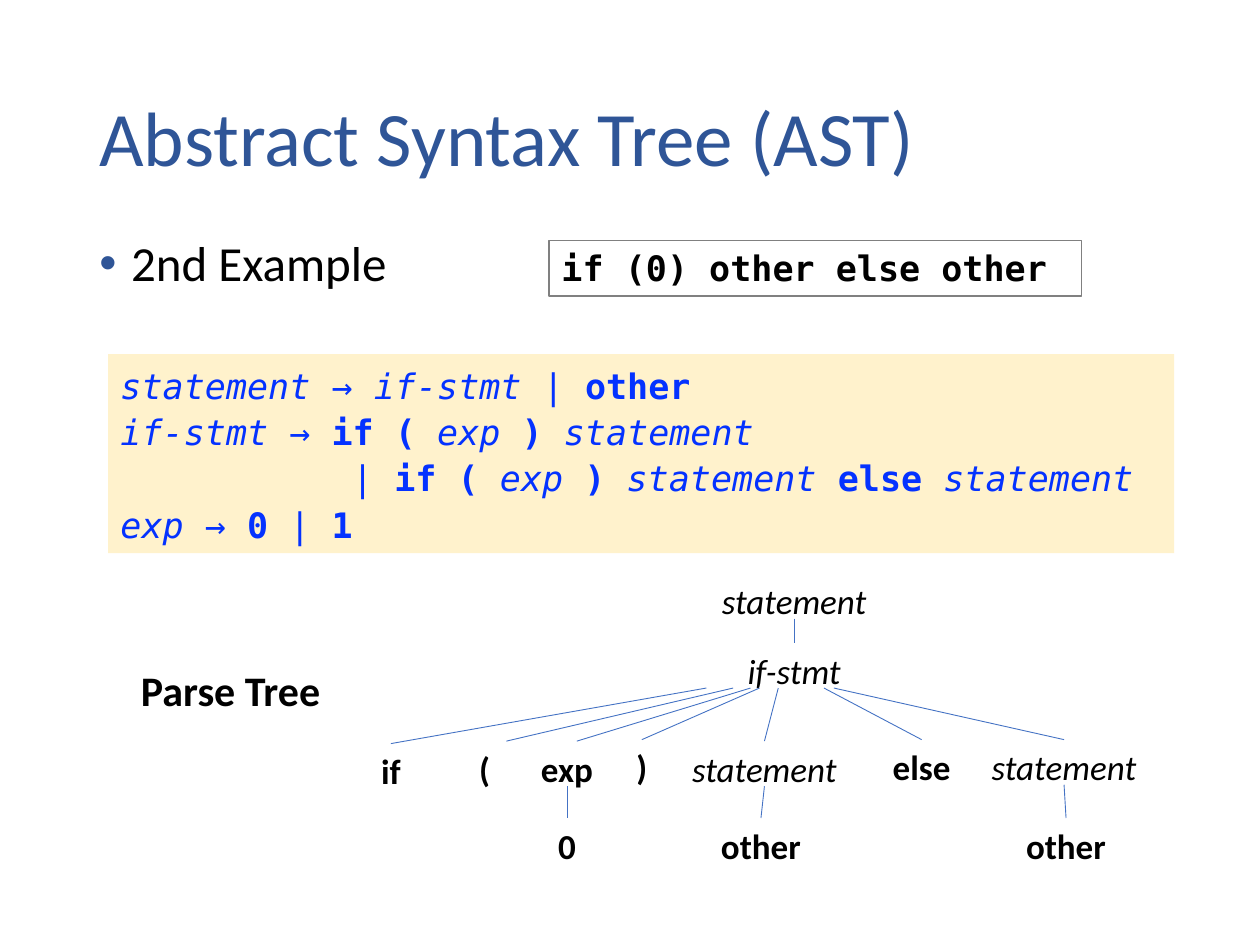
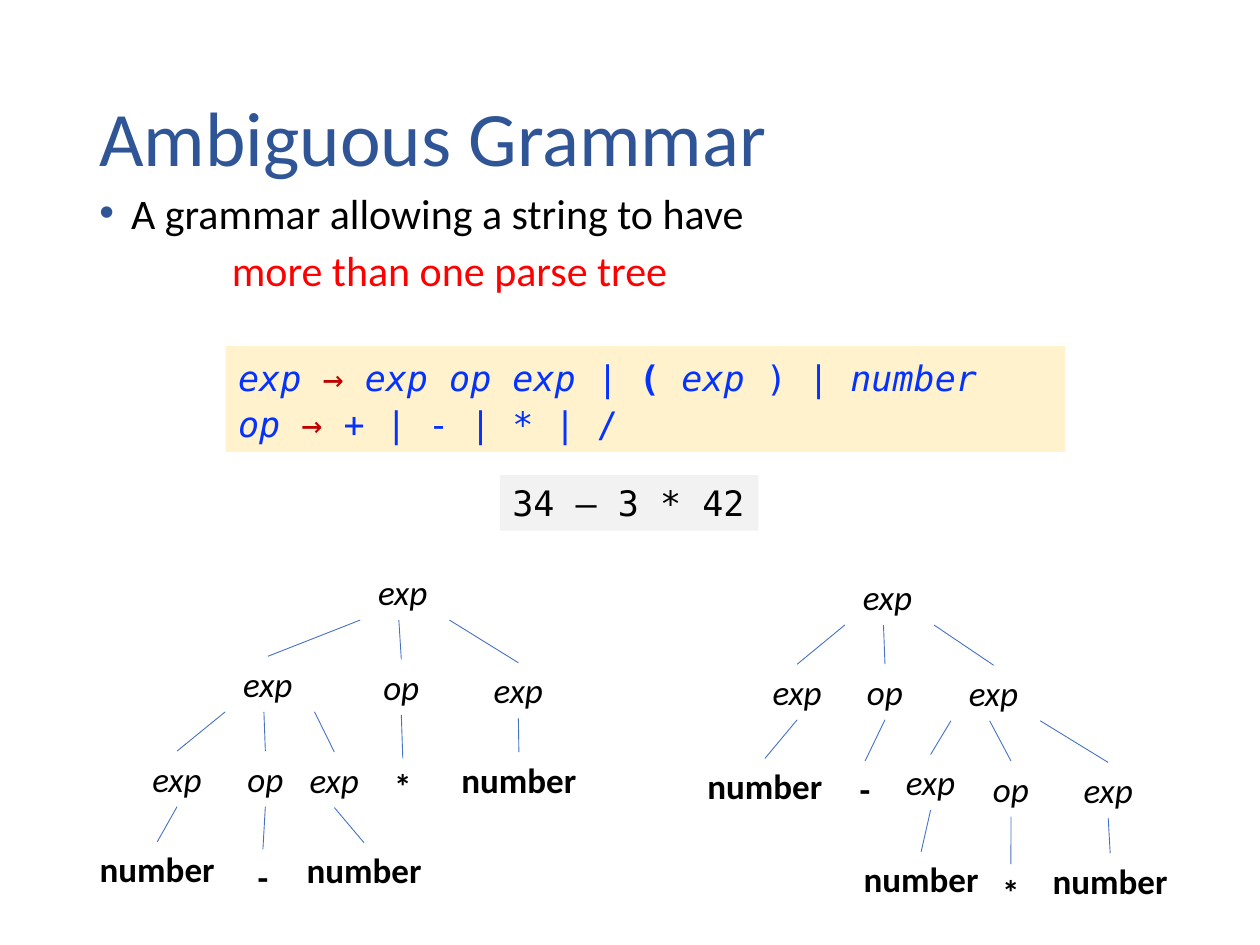
from dataclasses import dataclass

from lxml import etree
from pptx import Presentation
from pptx.dml.color import RGBColor
from pptx.enum.shapes import MSO_CONNECTOR, MSO_SHAPE
from pptx.enum.text import MSO_ANCHOR, MSO_AUTO_SIZE, PP_ALIGN
from pptx.oxml.ns import qn
from pptx.util import Cm, Pt

NAVY = RGBColor(0x2F, 0x55, 0x97)
BLACK = RGBColor(0x00, 0x00, 0x00)
RED = RGBColor(0xFF, 0x00, 0x00)
DARK_RED = RGBColor(0xC0, 0x00, 0x00)
CODE_BLUE = RGBColor(0x04, 0x32, 0xFF)
CREAM = RGBColor(0xFF, 0xF2, 0xCC)
PALE_GRAY = RGBColor(0xF2, 0xF2, 0xF2)
GRAY = RGBColor(0x80, 0x80, 0x80)
BRANCH_BLUE = RGBColor(0x44, 0x72, 0xC4)

SANS = "Calibri"
MONO = "DejaVu Sans Mono"
STRAIGHT = MSO_CONNECTOR.STRAIGHT
RECTANGLE = MSO_SHAPE.RECTANGLE
LEFT, CENTER = PP_ALIGN.LEFT, PP_ALIGN.CENTER
TOP, MIDDLE = MSO_ANCHOR.TOP, MSO_ANCHOR.MIDDLE
NO_FIT, GROW = MSO_AUTO_SIZE.NONE, MSO_AUTO_SIZE.SHAPE_TO_FIT_TEXT

TOP_SIDE, BOTTOM_SIDE = 0, 2
NODE_WIDTHS = {"statement": 3.53, "if-stmt": 3.84, "number": 2.84, "other": 2.13,
               "else": 1.7, "exp": 1.65, "op": 1.5, "if": 0.91, "0": 0.86,
               "*": 0.99, "-": 0.99, "(": 0.74, ")": 0.74}


@dataclass
class Node:
    label: str
    center: float
    top: float
    children: tuple = ()
    bold: bool = False
    lean: float = 0


@dataclass
class TreeStyle:
    node_height: float
    branch_drop: float
    fan: tuple


PARSE_STYLE = TreeStyle(0.74, 0.91, (-1.77, -1.23, -0.88, -0.7, -0.32, 0.6, 0.8))
AMBIGUOUS_STYLE = TreeStyle(1.12, 1.12, (-0.86, -0.08, 0.94))


def leaf(label, center, top, lean=0):
    return Node(label, center, top, bold=True, lean=lean)


PARSE_TREE = Node("statement", 8.59, 0, (
    Node("if-stmt", 8.59, 1.4, (
        leaf("if", 0.46, 3.43),
        leaf("(", 2.35, 3.38, lean=0.44),
        Node("exp", 4.01, 3.38, (leaf("0", 4.01, 4.93),), bold=True, lean=0.2),
        leaf(")", 5.52, 3.35),
        Node("statement", 7.99, 3.38, (leaf("other", 7.92, 4.93),)),
        leaf("else", 11.16, 3.35),
        Node("statement", 14.03, 3.35, (leaf("other", 14.07, 4.93),)),
    )),
))

SUBTRACT_FIRST_TREE = Node("exp", 6.37, 0, (
    Node("exp", 3.65, 1.85, (
        Node("exp", 1.82, 3.76, (leaf("number", 1.42, 5.59),)),
        Node("op", 3.6, 3.76, (leaf("-", 3.55, 5.74),)),
        Node("exp", 4.99, 3.78, (leaf("number", 5.59, 5.61),)),
    )),
    Node("op", 6.34, 1.91, (leaf("*", 6.37, 3.91),)),
    Node("exp", 8.7, 1.98, (leaf("number", 8.71, 3.78),)),
))

MULTIPLY_FIRST_TREE = Node("exp", 3.89, 0, (
    Node("exp", 2.07, 1.91, (leaf("number", 1.42, 3.81),)),
    Node("op", 3.84, 1.91, (leaf("-", 3.44, 3.86),)),
    Node("exp", 6.03, 1.93, (
        Node("exp", 4.76, 3.73, (leaf("number", 4.57, 5.69),)),
        Node("op", 6.38, 3.86, (leaf("*", 6.38, 5.94),)),
        Node("exp", 8.34, 3.89, (leaf("number", 8.38, 5.72),)),
    )),
))

IF_GRAMMAR = [
    (0, [("statement", "i"), (" → ", ""), ("if-stmt ", "i"), ("| ", ""), ("other", "b")]),
    (0, [("if-stmt ", "i"), ("→ ", ""), ("if ( ", "b"), ("exp ", "i"), (") ", "b"),
         ("statement", "i")]),
    (4.67, [("| ", ""), ("if ( ", "b"), ("exp ", "i"), (")", "b"), (" statement ", "i"),
            ("else", "b"), (" statement", "i")]),
    (0, [("exp → ", "i"), ("0 ", "b"), ("| ", ""), ("1", "b")]),
]

EXP_GRAMMAR = [
    (0, [("exp ", "i"), ("→ ", "r"), ("exp op exp ", "i"), ("| ", ""), ("(", "b"),
         (" exp ", "i"), (") |", ""), (" number", "i")]),
    (0, [("op ", "i"), ("→ ", "ir"), ("+ | - | * | /", "")]),
]


def box_lengths(box):
    return [Cm(length) for length in box]


def add_run(paragraph, text, size, color=BLACK, font=SANS, bold=False, italic=False):
    run = paragraph.add_run()
    run.text = text
    run.font.name = font
    run.font.size = Pt(size)
    run.font.bold = bold
    run.font.italic = italic
    run.font.color.rgb = color


def set_indent(paragraph, margin, indent=0):
    properties = paragraph._p.get_or_add_pPr()
    properties.set("marL", str(Cm(margin)))
    properties.set("indent", str(Cm(indent)))
    return properties


def set_bullet(paragraph):
    properties = set_indent(paragraph, 0.64, -0.64)
    bullet_color = etree.SubElement(properties, qn("a:buClr"))
    etree.SubElement(bullet_color, qn("a:srgbClr")).set("val", str(NAVY))
    etree.SubElement(properties, qn("a:buFont")).set("typeface", "Arial")
    etree.SubElement(properties, qn("a:buChar")).set("char", "•")


def set_plain(paragraph, margin):
    etree.SubElement(set_indent(paragraph, margin), qn("a:buNone"))


def place(shape, box):
    shape.left, shape.top, shape.width, shape.height = box_lengths(box)


def add_titled_slide(presentation, title):
    slide = presentation.slides.add_slide(presentation.slide_layouts[1])
    shape = slide.shapes.title
    place(shape, (1.75, 1.02, 21.9, 3.68))
    frame = shape.text_frame
    frame.vertical_anchor = MIDDLE
    frame.auto_size = NO_FIT
    paragraph = frame.paragraphs[0]
    paragraph.alignment = LEFT
    paragraph.line_spacing = 0.9
    add_run(paragraph, title, 44, NAVY)
    return slide


def fill_body(slide, box, lines, size, line_spacing):
    shape = slide.placeholders[1]
    place(shape, box)
    frame = shape.text_frame
    frame.auto_size = NO_FIT
    for index, (text, color, plain_margin) in enumerate(lines):
        paragraph = frame.add_paragraph() if index else frame.paragraphs[0]
        paragraph.line_spacing = line_spacing
        paragraph.space_before = Pt(10)
        if plain_margin:
            set_plain(paragraph, plain_margin)
        else:
            set_bullet(paragraph)
        add_run(paragraph, text, size, color)


def add_panel(slide, box, fill=None, line=None):
    shape = slide.shapes.add_shape(RECTANGLE, *box_lengths(box))
    shape.shadow.inherit = False
    if fill is None:
        shape.fill.background()
    else:
        shape.fill.solid()
        shape.fill.fore_color.rgb = fill
    if line is None:
        shape.line.fill.background()
    else:
        shape.line.color.rgb = line
        shape.line.width = Pt(0.75)
    frame = shape.text_frame
    frame.word_wrap = True
    frame.vertical_anchor = TOP
    frame.paragraphs[0].alignment = LEFT
    return frame


def add_grammar(slide, box, rules):
    frame = add_panel(slide, box, fill=CREAM)
    for index, (margin, runs) in enumerate(rules):
        paragraph = frame.add_paragraph() if index else frame.paragraphs[0]
        paragraph.alignment = LEFT
        paragraph.line_spacing = 1.1
        set_indent(paragraph, margin)
        for text, style in runs:
            add_run(paragraph, text, 20, DARK_RED if "r" in style else CODE_BLUE,
                    MONO, "b" in style, "i" in style)


def add_sample(slide, box, text, fill=None, line=None, bold=False):
    frame = add_panel(slide, box, fill, line)
    add_run(frame.paragraphs[0], text, 20, font=MONO, bold=bold)


def add_label(slide, box, text, size, bold, alignment=LEFT):
    shape = slide.shapes.add_textbox(*box_lengths(box))
    frame = shape.text_frame
    frame.word_wrap = False
    frame.auto_size = GROW
    frame.paragraphs[0].alignment = alignment
    add_run(frame.paragraphs[0], text, size, bold=bold, italic=not bold)
    return shape


def add_branch(slide, start, end):
    connector = slide.shapes.add_connector(STRAIGHT, *box_lengths(start + end))
    connector.line.color.rgb = BRANCH_BLUE
    connector.line.width = Pt(0.5)
    etree.SubElement(connector._element.spPr, qn("a:effectLst"))
    return connector


def add_tree(slide, origin, node, style):
    left, top = origin
    width = NODE_WIDTHS[node.label]
    box = (left + node.center - width / 2, top + node.top, width, style.node_height)
    shape = add_label(slide, box, node.label, 20, node.bold, CENTER)
    only_child = len(node.children) == 1
    offsets = (0,) if only_child else style.fan
    for child, offset in zip(node.children, offsets):
        child_shape = add_tree(slide, origin, child, style)
        start = (left + node.center + offset, top + node.top + style.branch_drop)
        end = (left + child.center + child.lean, top + child.top)
        branch = add_branch(slide, start, end)
        if only_child and style.branch_drop == style.node_height:
            branch.begin_connect(shape, BOTTOM_SIDE)
        if not child.lean:
            branch.end_connect(child_shape, TOP_SIDE)
    return shape


def build_syntax_tree_slide(presentation):
    slide = add_titled_slide(presentation, "Abstract Syntax Tree (AST)")
    fill_body(slide, (1.75, 4.7, 21.92, 4.39), [("2nd Example", BLACK, 0)], 28, 0.9)
    add_grammar(slide, (2.18, 7.14, 21.49, 4.01), IF_GRAMMAR)
    add_sample(slide, (11.07, 4.85, 10.74, 1.12), "if (0) other else other",
               line=GRAY, bold=True)
    add_tree(slide, (7.42, 11.56), PARSE_TREE, PARSE_STYLE)
    add_label(slide, (2.59, 13.28, 4.17, 1.27), "Parse Tree", 24, True)


def build_ambiguous_grammar_slide(presentation):
    slide = add_titled_slide(presentation, "Ambiguous Grammar")
    lines = [("A grammar allowing a string to have", BLACK, 0),
             ("more than one parse tree", RED, 2.67)]
    fill_body(slide, (1.75, 3.84, 23.65, 2.39), lines, 24, 0.8)
    add_grammar(slide, (4.55, 6.98, 16.92, 2.13), EXP_GRAMMAR)
    add_sample(slide, (10.08, 9.58, 5.21, 1.12), "34 – 3 * 42", fill=PALE_GRAY)
    add_tree(slide, (1.75, 11.38), SUBTRACT_FIRST_TREE, AMBIGUOUS_STYLE)
    add_tree(slide, (14, 11.48), MULTIPLY_FIRST_TREE, AMBIGUOUS_STYLE)


def main():
    presentation = Presentation()
    presentation.slide_width = Cm(25.4)
    presentation.slide_height = Cm(19.05)
    build_syntax_tree_slide(presentation)
    build_ambiguous_grammar_slide(presentation)
    presentation.save("out.pptx")


if __name__ == "__main__":
    main()
